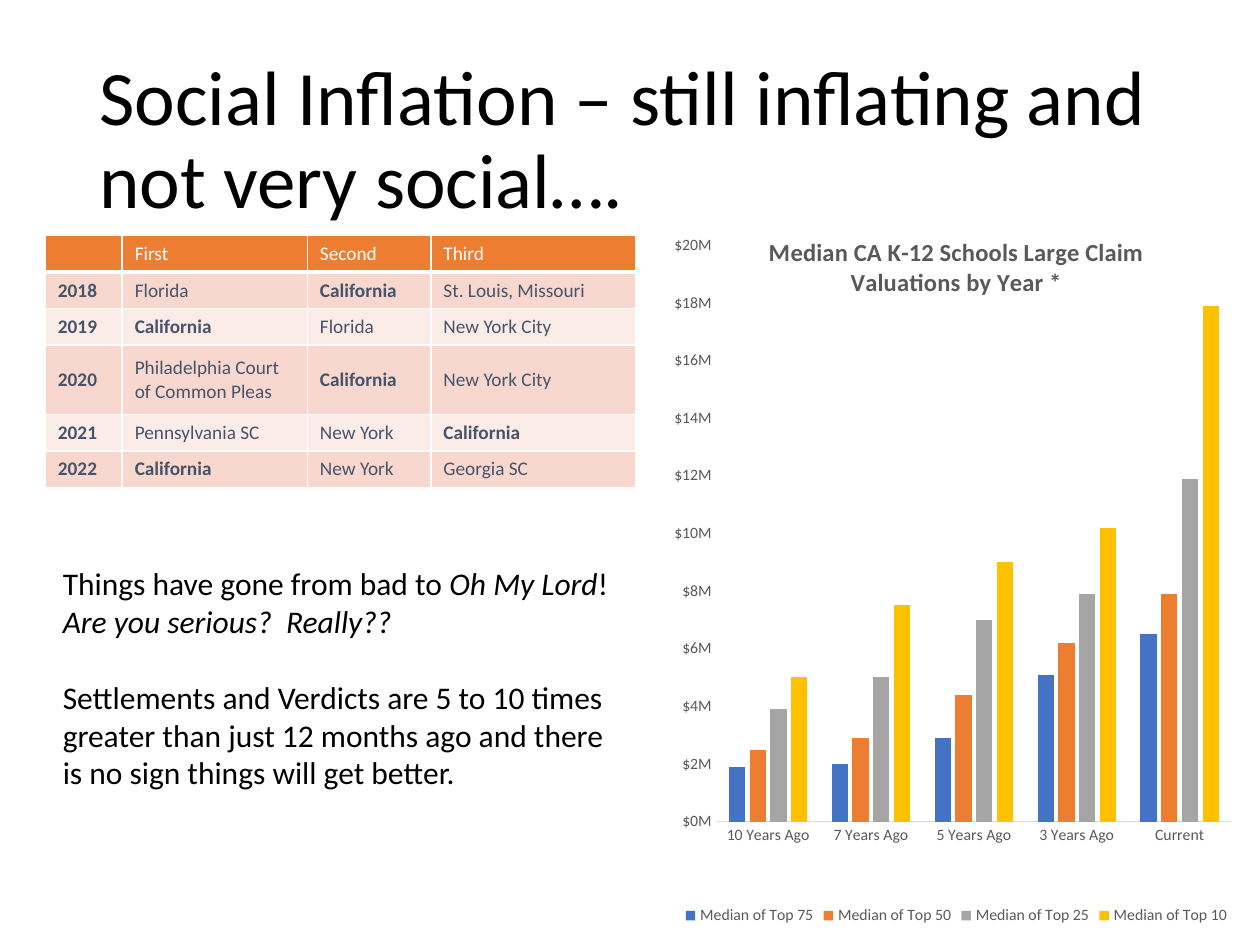
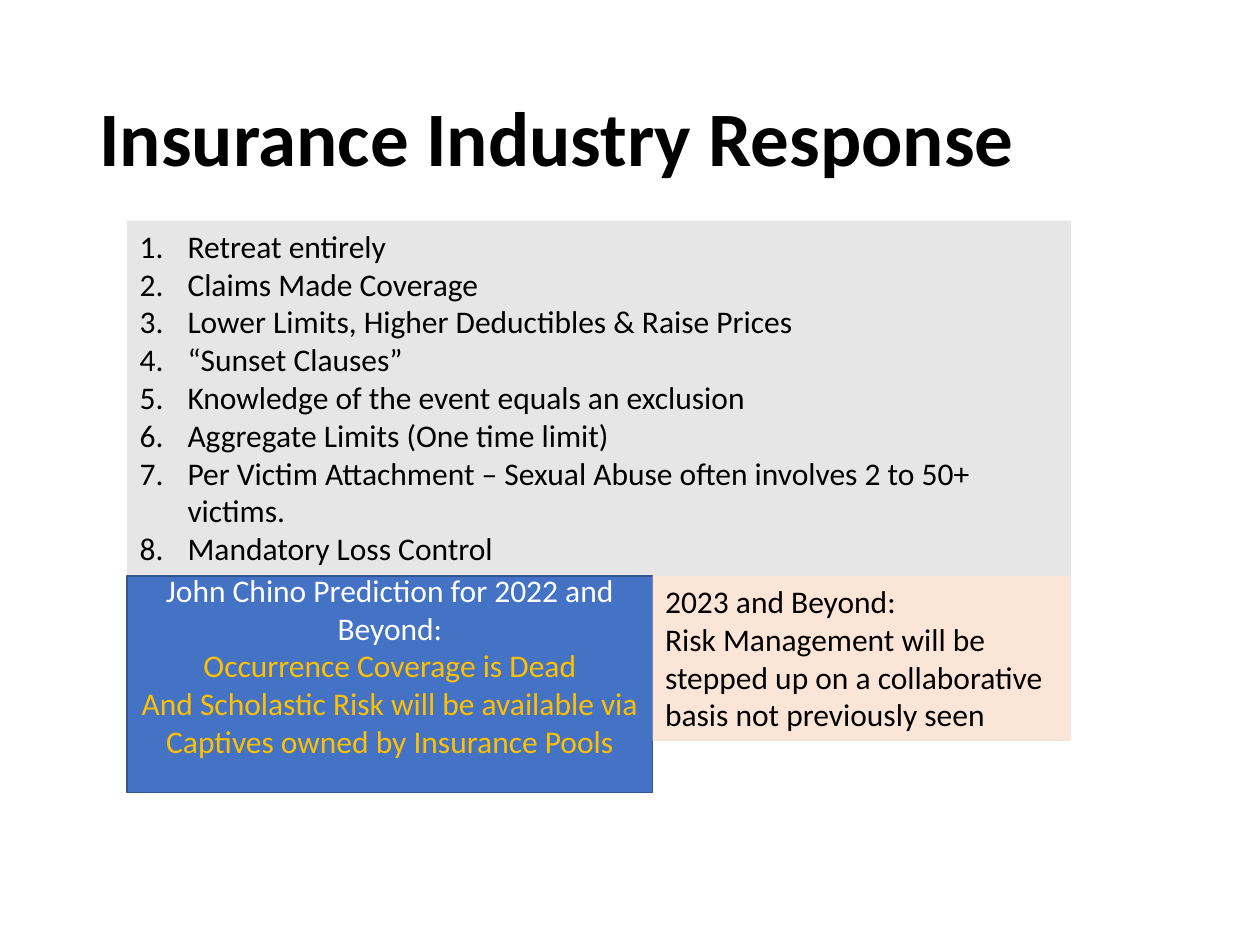
from dataclasses import dataclass

from lxml.etree import SubElement
from pptx import Presentation
from pptx.chart.data import CategoryChartData
from pptx.dml.color import RGBColor
from pptx.enum.chart import XL_CHART_TYPE as ChartType, XL_LEGEND_POSITION as LegendPosition
from pptx.enum.chart import XL_TICK_MARK as TickMark
from pptx.enum.shapes import MSO_SHAPE as Shape
from pptx.enum.text import MSO_ANCHOR as Anchor, PP_ALIGN as Align
from pptx.oxml.ns import qn
from pptx.util import Inches, Pt


@dataclass(frozen=True)
class Theme:
    font: str = "Calibri"
    title_size: int = 44
    body_size: int = 18
    chart_title_size: int = 14
    table_size: int = 11
    chart_size: int = 9
    black: str = "000000"
    white: str = "FFFFFF"
    slate: str = "44546A"
    gray_text: str = "595959"
    axis: str = "D9D9D9"
    blue: str = "4472C4"
    blue_edge: str = "325491"
    orange: str = "ED7D31"
    gray: str = "A5A5A5"
    gold: str = "FFC000"
    band_dark: str = "F8D7CE"
    band_light: str = "FCECE8"
    panel: str = "E7E6E6"
    peach: str = "FBE5D6"


THEME = Theme()
TITLE_BOX = (0.69, 0.4, 8.62, 1.45)

RANKING_WIDTHS = (0.61, 1.47, 0.98, 1.63)
RANKING_HEIGHTS = (0.29, 0.29, 0.29, 0.55, 0.29, 0.29)
RANKING = (
    ("", "First", "Second", "Third"),
    ("2018", "Florida", "California", "St. Louis, Missouri"),
    ("2019", "California", "Florida", "New York City"),
    ("2020", "Philadelphia Court of Common Pleas", "California", "New York City"),
    ("2021", "Pennsylvania SC", "New York", "California"),
    ("2022", "California", "New York", "Georgia SC"),
)

CLAIM_YEARS = ("10 Years Ago", "7 Years Ago", "5 Years Ago", "3 Years Ago", "Current")
CLAIM_MEDIANS = (
    ("Median of Top 75", THEME.blue, (1.9, 2, 2.9, 5.1, 6.5)),
    ("Median of Top 50", THEME.orange, (2.5, 2.9, 4.4, 6.2, 7.9)),
    ("Median of Top 25", THEME.gray, (3.9, 5, 7, 7.9, 11.9)),
    ("Median of Top 10", THEME.gold, (5, 7.5, 9, 10.2, 17.9)),
)

REMARK = (
    ("Things have gone from bad to ", False),
    ("Oh My Lord", True),
    ("! ", False),
    ("Are you serious?  Really??", True),
)
OUTLOOK = (
    "Settlements and Verdicts are 5 to 10 times greater than just 12 months ago "
    "and there is no sign things will get better."
)

RESPONSES = (
    "Retreat entirely",
    "Claims Made Coverage",
    "Lower Limits, Higher Deductibles & Raise Prices",
    "“Sunset Clauses”",
    "Knowledge of the event equals an exclusion",
    "Aggregate Limits (One time limit)",
    "Per Victim Attachment – Sexual Abuse often involves 2 to 50+ victims.",
    "Mandatory Loss Control",
)
PREDICTION = (
    "John Chino Prediction for 2022 and Beyond:",
    "Occurrence Coverage is Dead",
    "And Scholastic Risk will be available via Captives owned by Insurance Pools",
)
BEYOND = (
    "2023 and Beyond:",
    "Risk Management will be stepped up on a collaborative basis not previously seen",
)


def rgb(color):
    return RGBColor.from_string(color)


def inches(box):
    return [Inches(length) for length in box]


def style_font(font, size, color, bold=False, italic=False):
    font.name = THEME.font
    font.size = Pt(size)
    font.color.rgb = rgb(color)
    font.bold = bold
    font.italic = italic


def style_runs(paragraph, size, color, bold=False):
    for run in paragraph.runs:
        style_font(run.font, size, color, bold)


def add_text_frame(slide, box):
    frame = slide.shapes.add_textbox(*inches(box)).text_frame
    frame.word_wrap = True
    return frame


def add_title(slide, title, bold=False):
    frame = add_text_frame(slide, TITLE_BOX)
    frame.vertical_anchor = Anchor.MIDDLE
    frame.text = title
    paragraph = frame.paragraphs[0]
    paragraph.line_spacing = 0.9
    style_runs(paragraph, THEME.title_size, THEME.black, bold)


def add_cell_borders(cell, bottom_width):
    properties = cell._tc.get_or_add_tcPr()
    for position, side in enumerate(("lnL", "lnR", "lnT", "lnB")):
        width = bottom_width if side == "lnB" else 1
        border = properties.makeelement(qn(f"a:{side}"), {"w": str(Pt(width))})
        fill = SubElement(border, qn("a:solidFill"))
        SubElement(fill, qn("a:srgbClr"), val=THEME.white)
        properties.insert(position, border)


def add_ranking(slide, box):
    table = slide.shapes.add_table(len(RANKING), len(RANKING[0]), *inches(box)).table
    for column, width in zip(table.columns, RANKING_WIDTHS):
        column.width = Inches(width)
    for row, height in zip(table.rows, RANKING_HEIGHTS):
        row.height = Inches(height)
    for row_number, places in enumerate(RANKING):
        header = row_number == 0
        band = THEME.band_dark if row_number % 2 else THEME.band_light
        for column_number, place in enumerate(places):
            cell = table.cell(row_number, column_number)
            cell.fill.solid()
            cell.fill.fore_color.rgb = rgb(THEME.orange if header else band)
            cell.vertical_anchor = Anchor.TOP if header else Anchor.MIDDLE
            cell.text = place
            paragraph = cell.text_frame.paragraphs[0]
            paragraph.font.size = Pt(THEME.table_size)
            bold = not header and (column_number == 0 or place == "California")
            style_runs(paragraph, THEME.table_size, THEME.white if header else THEME.slate, bold)
            add_cell_borders(cell, 3 if header else 1)


def set_plot_layout(chart, x, y, width, height):
    plot_area = chart._chartSpace.chart.plotArea
    for old_layout in plot_area.findall(qn("c:layout")):
        plot_area.remove(old_layout)
    layout = plot_area.makeelement(qn("c:layout"), {})
    plot_area.insert(0, layout)
    manual = SubElement(layout, qn("c:manualLayout"))
    settings = (("layoutTarget", "inner"), ("xMode", "edge"), ("yMode", "edge"),
                ("x", x), ("y", y), ("w", width), ("h", height))
    for tag, value in settings:
        SubElement(manual, qn(f"c:{tag}"), val=str(value))


def add_claims_chart(slide, box):
    data = CategoryChartData()
    data.categories = CLAIM_YEARS
    for name, _, medians in CLAIM_MEDIANS:
        data.add_series(name, medians)
    chart = slide.shapes.add_chart(ChartType.COLUMN_CLUSTERED, *inches(box), data).chart
    style_font(chart.font, THEME.chart_size, THEME.gray_text)

    chart.has_title = True
    heading = chart.chart_title.text_frame
    heading.text = "Median CA K-12 Schools Large Claim Valuations by Year *"
    style_runs(heading.paragraphs[0], THEME.chart_title_size, THEME.gray_text, bold=True)
    chart.chart_title.include_in_layout = True

    chart.has_legend = True
    chart.legend.position = LegendPosition.BOTTOM
    chart.legend.include_in_layout = False
    style_font(chart.legend.font, THEME.chart_size, THEME.gray_text)

    plot = chart.plots[0]
    plot.gap_width = 150
    plot.overlap = -27
    plot.vary_by_categories = False
    for series, (_, color, _) in zip(plot.series, CLAIM_MEDIANS):
        series.format.fill.solid()
        series.format.fill.fore_color.rgb = rgb(color)

    for axis in (chart.category_axis, chart.value_axis):
        axis.has_major_gridlines = False
        axis.major_tick_mark = axis.minor_tick_mark = TickMark.NONE
        style_font(axis.tick_labels.font, THEME.chart_size, THEME.gray_text)
    year_line = chart.category_axis.format.line
    year_line.color.rgb = rgb(THEME.axis)
    year_line.width = Pt(0.75)
    amounts = chart.value_axis
    amounts.minimum_scale, amounts.maximum_scale, amounts.major_unit = 0, 20, 2
    amounts.tick_labels.number_format = '"$"#,##0"M"'
    amounts.tick_labels.number_format_is_linked = False
    amounts.format.line.fill.background()
    set_plot_layout(chart, 0.09, 0.05, 0.88, 0.8)


def add_commentary(slide, box):
    frame = add_text_frame(slide, box)
    remark = frame.paragraphs[0]
    for words, italic in REMARK:
        run = remark.add_run()
        run.text = words
        style_font(run.font, THEME.body_size, THEME.black, italic=italic)
    outlook = frame.add_paragraph()
    outlook.text = OUTLOOK
    outlook.space_before = Pt(1.2 * THEME.body_size)
    style_runs(outlook, THEME.body_size, THEME.black)


def add_panel(slide, box, fill, lines, colors, align=Align.LEFT, anchor=Anchor.TOP):
    panel = slide.shapes.add_shape(Shape.RECTANGLE, *inches(box))
    panel.shadow.inherit = False
    panel.fill.solid()
    panel.fill.fore_color.rgb = rgb(fill)
    panel.line.fill.background()
    frame = panel.text_frame
    frame.word_wrap = True
    frame.vertical_anchor = anchor
    frame.text = "\n".join(lines)
    for paragraph, color in zip(frame.paragraphs, colors):
        paragraph.alignment = align
        style_runs(paragraph, THEME.body_size, color)
    return panel


def add_responses(slide, box):
    panel = add_panel(slide, box, THEME.panel, RESPONSES, [THEME.black] * len(RESPONSES))
    indent = Inches(0.38)
    for paragraph in panel.text_frame.paragraphs:
        properties = paragraph._p.get_or_add_pPr()
        properties.set("marL", str(indent))
        properties.set("indent", str(-indent))
        SubElement(properties, qn("a:buFont"), typeface="+mj-lt")
        SubElement(properties, qn("a:buAutoNum"), type="arabicPeriod")


def add_prediction(slide, box):
    colors = (THEME.white, THEME.gold, THEME.gold)
    panel = add_panel(slide, box, THEME.blue, PREDICTION, colors, Align.CENTER, Anchor.MIDDLE)
    panel.line.color.rgb = rgb(THEME.blue_edge)
    panel.line.width = Pt(1)
    panel.text_frame.margin_bottom = Inches(0.35)


def build_inflation_slide(slide):
    add_title(slide, "Social Inflation – still inflating and not very social….")
    add_claims_chart(slide, (5.27, 1.66, 4.64, 5.72))
    add_ranking(slide, (0.36, 1.87, sum(RANKING_WIDTHS), sum(RANKING_HEIGHTS)))
    add_commentary(slide, (0.4, 4.43, 4.66, 1.92))


def build_response_slide(slide):
    left, top, width, height = 1.01, 1.75, 7.49, 2.82
    prediction_width = 4.17
    lower_top = top + height
    add_title(slide, "Insurance Industry Response", bold=True)
    add_responses(slide, (left, top, width, height))
    add_prediction(slide, (left, lower_top, prediction_width, 1.72))
    beyond_box = (left + prediction_width, lower_top, width - prediction_width, 1.31)
    add_panel(slide, beyond_box, THEME.peach, BEYOND, [THEME.black] * len(BEYOND))


def main():
    deck = Presentation()
    deck.slide_width, deck.slide_height = Inches(10), Inches(7.5)
    for build in (build_inflation_slide, build_response_slide):
        build(deck.slides.add_slide(deck.slide_layouts[6]))
    deck.save("out.pptx")


if __name__ == "__main__":
    main()
